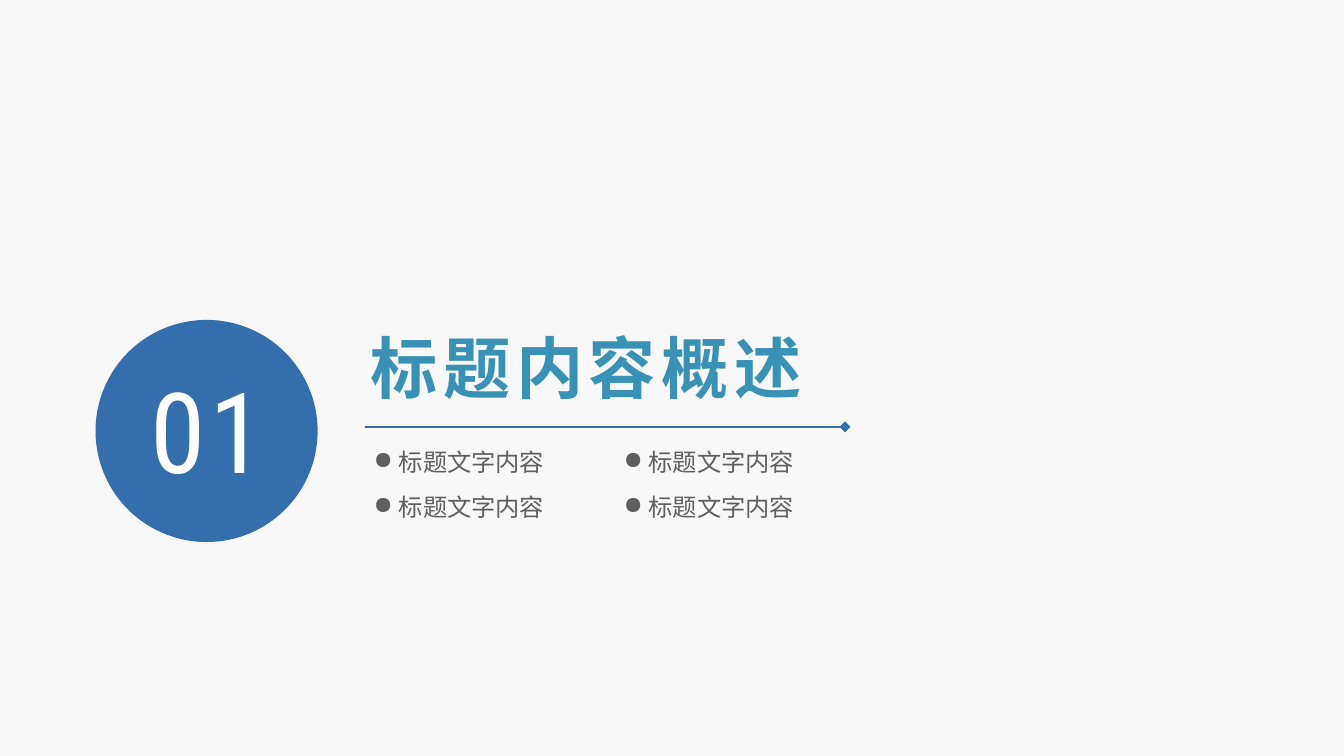
from lxml import etree
from pptx import Presentation
from pptx.dml.color import RGBColor
from pptx.enum.shapes import MSO_CONNECTOR, MSO_SHAPE
from pptx.enum.text import MSO_AUTO_SIZE
from pptx.oxml.ns import qn
from pptx.util import Pt

STRAIGHT = MSO_CONNECTOR.STRAIGHT
OVAL = MSO_SHAPE.OVAL
GROW = MSO_AUTO_SIZE.SHAPE_TO_FIT_TEXT

BLUE, TEAL, GREY, WHITE, PAPER = "356EAD", "3992B5", "5F5F5F", "FFFFFF", "F8F8F8"
CJK, LATIN = "Noto Sans CJK SC", "Roboto Condensed"

NUMBER = "01"
TITLE = "标题内容概述"
TOPICS = [
    ["标题文字内容", "标题文字内容"],
    ["标题文字内容", "标题文字内容"],
]
TOPIC_LEFT, TOPIC_TOP = 200.2, 239.8
COLUMN_STEP, ROW_STEP = 133.9, 24
INDENT = 13.5


def color(value):
    return RGBColor.from_string(value)


def add_text(text, left, top, width, height, *, size, fill, font=CJK,
             bold=False, spacing=0, wrap=True, inset=None, bullet=None):
    sp = s.shapes.add_textbox(Pt(left), Pt(top), Pt(width), Pt(height))
    tf = sp.text_frame
    tf.word_wrap = wrap
    tf.auto_size = GROW
    if inset is not None:
        tf.margin_left = tf.margin_right = Pt(inset)
        tf.margin_top = tf.margin_bottom = Pt(inset)
    p = tf.paragraphs[0]
    if bullet:
        ppr = p._p.get_or_add_pPr()
        ppr.set("marL", str(Pt(INDENT)))
        ppr.set("indent", str(-Pt(INDENT)))
        etree.SubElement(ppr, qn("a:buChar"), char=bullet)
    r = p.add_run()
    r.text = text
    r.font.size = Pt(size)
    r.font.bold = bold
    r.font.name = font
    r.font.color.rgb = color(fill)
    rpr = r.font._element
    etree.SubElement(rpr, qn("a:ea"), typeface=font)
    if spacing:
        rpr.set("spc", str(round(spacing * 100)))


prs = Presentation()
prs.slide_width, prs.slide_height = Pt(720), Pt(405)
s = prs.slides.add_slide(prs.slide_layouts[6])
s.background.fill.solid()
s.background.fill.fore_color.rgb = color(PAPER)

add_text(TITLE, 191.5, 171.4, 250.6, 51.1, size=36, fill=TEAL, bold=True,
         spacing=3, wrap=False)

rule = s.shapes.add_connector(STRAIGHT, Pt(195.4), Pt(228.7), Pt(452.7), Pt(228.7))
rule.line.color.rgb = color(BLUE)
rule.line.width = Pt(0.75)
etree.SubElement(rule.line._get_or_add_ln(), qn("a:tailEnd"), type="diamond")
etree.SubElement(rule._element.spPr, qn("a:effectLst"))

for row, topics in enumerate(TOPICS):
    for column, topic in enumerate(topics):
        add_text(topic, TOPIC_LEFT + column * COLUMN_STEP, TOPIC_TOP + row * ROW_STEP,
                 158.4, 15.8, size=13, fill=GREY, inset=0, bullet="●")

circle = s.shapes.add_shape(OVAL, Pt(51.2), Pt(171.4), Pt(119), Pt(119))
circle.shadow.inherit = False
circle.fill.solid()
circle.fill.fore_color.rgb = color(BLUE)
circle.line.fill.background()

add_text(NUMBER, 73.4, 190.1, 80.6, 79.9, size=60, fill=WHITE, font=LATIN, spacing=2.2)

prs.save("out.pptx")
